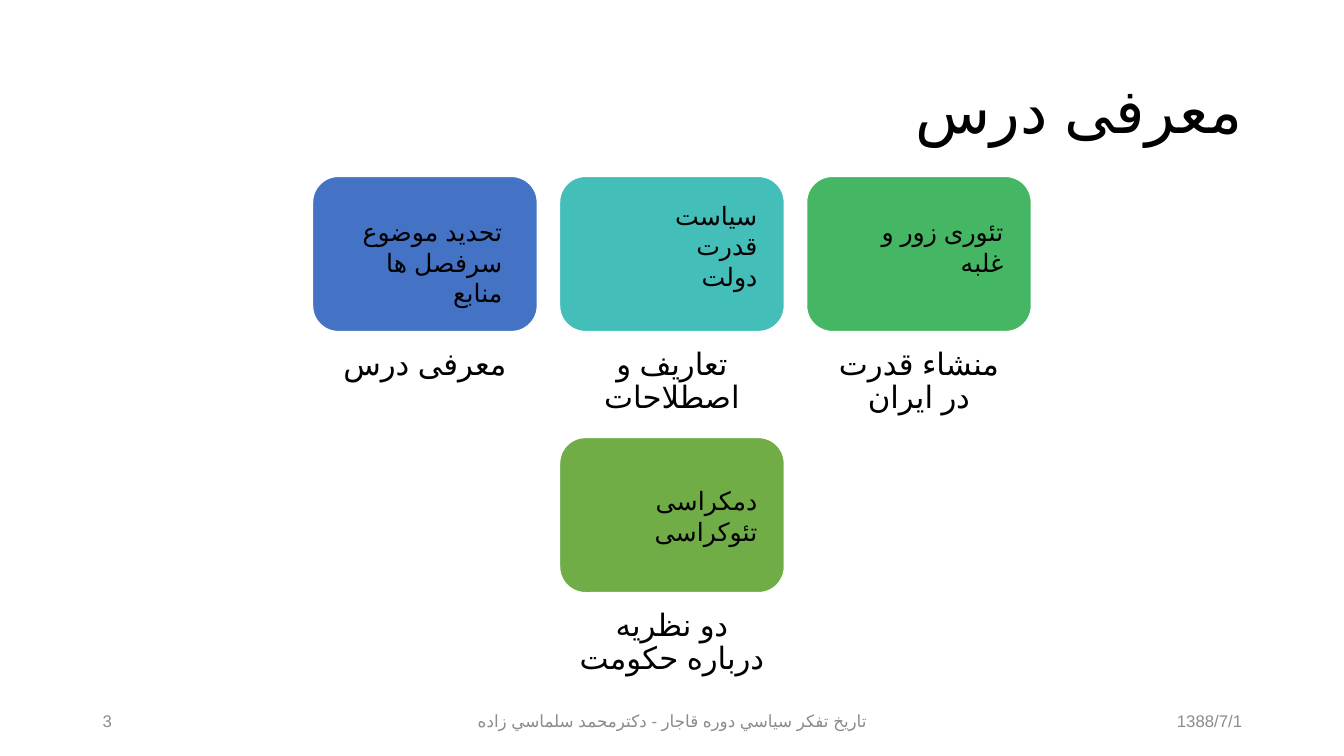
from dataclasses import dataclass

from lxml import etree
from pptx import Presentation
from pptx.dml.color import RGBColor
from pptx.enum.lang import MSO_LANGUAGE_ID
from pptx.enum.shapes import MSO_SHAPE
from pptx.enum.text import MSO_ANCHOR, PP_ALIGN
from pptx.oxml.ns import qn
from pptx.util import Inches, Pt

ROUNDED = MSO_SHAPE.ROUNDED_RECTANGLE
TOP, MIDDLE = MSO_ANCHOR.TOP, MSO_ANCHOR.MIDDLE
LEFT, CENTER, RIGHT = PP_ALIGN.LEFT, PP_ALIGN.CENTER, PP_ALIGN.RIGHT
FARSI = MSO_LANGUAGE_ID.FARSI


@dataclass(frozen=True)
class Theme:
    """Colours, fonts and type sizes of the slide."""
    font: str = "Calibri"
    script_font: str = "Arial"
    ink: str = "000000"
    muted: str = "8C8C8C"
    outline: str = "FFFFFF"
    blue: str = "4472C4"
    teal: str = "43BEB9"
    green: str = "45B664"
    olive: str = "70AD47"
    title_size: int = 44
    caption_size: int = 22
    topic_size: int = 18
    footer_size: int = 12


THEME = Theme()
CARD_WIDTH, CARD_HEIGHT, CAPTION_HEIGHT = 2.23, 1.54, 0.83
FIRST_LEFT, COLUMN_STEP = 3.1, 2.45
FIRST_TOP, ROW_STEP = 1.75, 2.59
FOOTER_TOP, FOOTER_HEIGHT = 6.95, 0.4

CARDS = [
    (0, 0, THEME.blue, "معرفی درس",
     ["تحدید موضوع", "سرفصل ها", "منابع"], (3.36, 2.1, 1.72, 1.01)),
    (1, 0, THEME.teal, "تعاریف و اصطلاحات",
     ["سیاست", "قدرت", "دولت"], (5.72, 1.94, 1.89, 1.01)),
    (2, 0, THEME.green, "منشاء قدرت در ایران",
     ["تئوری زور و غلبه"], (8.25, 2.1, 1.8, 0.4)),
    (1, 1, THEME.olive, "دو نظریه درباره حکومت",
     ["دمکراسی", "تئوکراسی"], (5.72, 4.77, 1.89, 0.71)),
]

FOOTERS = [
    (9.42, 3, RIGHT, "1388/7/1"),
    (4.42, 4.5, CENTER, "تاريخ تفكر سياسي دوره قاجار - دكترمحمد سلماسي زاده"),
    (0.92, 3, LEFT, "3"),
]


def add_text(slide, lines, box, *, size, color=THEME.ink, align=RIGHT,
             anchor=TOP, spacing=1.0, insets=(0.1, 0.05, 0.1, 0.05)):
    """Add a right-to-left text box with one paragraph per line."""
    frame = slide.shapes.add_textbox(*map(Inches, box)).text_frame
    frame.word_wrap = True
    frame.vertical_anchor = anchor
    (frame.margin_left, frame.margin_top,
     frame.margin_right, frame.margin_bottom) = map(Inches, insets)
    for index, line in enumerate(lines):
        paragraph = frame.add_paragraph() if index else frame.paragraphs[0]
        paragraph.alignment = align
        paragraph.line_spacing = spacing
        paragraph._p.get_or_add_pPr().set("rtl", "1")
        run = paragraph.add_run()
        run.text = line
        run.font.name = THEME.font
        run.font.size = Pt(size)
        run.font.color.rgb = RGBColor.from_string(color)
        run.font.language_id = FARSI
        etree.SubElement(run._r.get_or_add_rPr(), qn("a:cs"),
                         typeface=THEME.script_font)


def add_card(slide, column, row, color, caption):
    """Add a rounded card with its caption below."""
    left = FIRST_LEFT + column * COLUMN_STEP
    top = FIRST_TOP + row * ROW_STEP
    card = slide.shapes.add_shape(
        ROUNDED, *map(Inches, (left, top, CARD_WIDTH, CARD_HEIGHT)))
    card.shadow.inherit = False
    card.fill.solid()
    card.fill.fore_color.rgb = RGBColor.from_string(color)
    card.line.color.rgb = RGBColor.from_string(THEME.outline)
    card.line.width = Pt(1)
    add_text(slide, [caption],
             (left, top + CARD_HEIGHT, CARD_WIDTH, CAPTION_HEIGHT),
             size=THEME.caption_size, align=CENTER, spacing=0.9,
             insets=(0.17, 0.17, 0.17, 0))


def main():
    """Build the course introduction slide."""
    deck = Presentation()
    deck.slide_width, deck.slide_height = Inches(13.33), Inches(7.5)
    slide = deck.slides.add_slide(deck.slide_layouts[6])
    add_text(slide, ["معرفی درس"], (0.92, 0.4, 11.5, 1.45),
             size=THEME.title_size, anchor=MIDDLE, spacing=0.9)
    for column, row, color, caption, topics, topics_box in CARDS:
        add_card(slide, column, row, color, caption)
        add_text(slide, topics, topics_box, size=THEME.topic_size)
    for left, width, align, text in FOOTERS:
        add_text(slide, [text], (left, FOOTER_TOP, width, FOOTER_HEIGHT),
                 size=THEME.footer_size, color=THEME.muted, align=align,
                 anchor=MIDDLE)
    deck.save("out.pptx")


if __name__ == "__main__":
    main()
